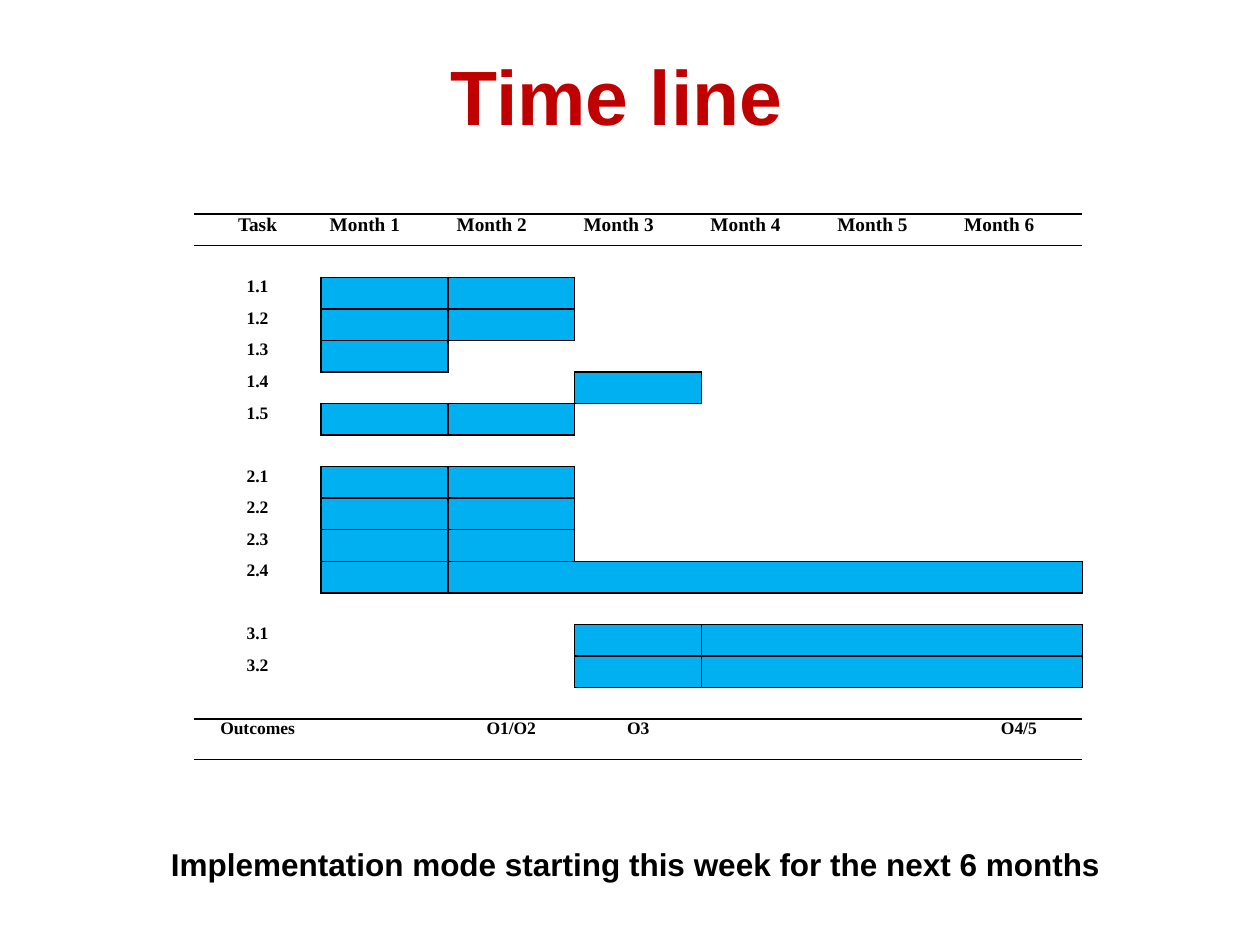
from dataclasses import dataclass

from lxml.etree import SubElement
from pptx import Presentation
from pptx.dml.color import RGBColor
from pptx.enum.text import MSO_ANCHOR, PP_ALIGN
from pptx.oxml.ns import qn
from pptx.util import Inches, Pt

COLOURS = {"title": "C00000", "ink": "000000", "bar": "00B0F0"}
SLIDE_WIDTH, SLIDE_HEIGHT = Inches(10), Inches(7.5)
MONTHS = 6
COLUMNS = MONTHS + 1
TABLE_LEFT, TABLE_TOP = Inches(1.54), Inches(1.7)
TABLE_WIDTH, TABLE_HEIGHT = Inches(7.05), Inches(4.33)
OUTCOME_HEIGHT = Inches(0.32)
NO_STYLE = "{2D5ABB26-0587-4C30-8999-92F81FD0307C}"


@dataclass(frozen=True)
class Task:
    label: str
    first_month: int
    last_month: int


@dataclass(frozen=True)
class Caption:
    text: str
    left: float
    top: float
    width: float
    height: float
    size: int
    colour: str
    wrap: bool


GROUPS = [
    [Task("1.1", 1, 2), Task("1.2", 1, 2), Task("1.3", 1, 1), Task("1.4", 3, 3), Task("1.5", 1, 2)],
    [Task("2.1", 1, 2), Task("2.2", 1, 2), Task("2.3", 1, 2), Task("2.4", 1, 6)],
    [Task("3.1", 3, 6), Task("3.2", 3, 6)],
]
OUTCOMES = {0: "Outcomes", 2: "O1/O2", 3: "O3", 6: "O4/5"}
CAPTIONS = [
    Caption("Time line", 0.098, 0.037, 0.783, 0.127, 44, "title", True),
    Caption("Implementation mode starting this week for the next 6 months",
            0.122, 0.888, 0.765, 0.053, 18, "ink", False),
]


def style_paragraph(para, font_name: str, size: int, colour: str, alignment) -> None:
    para.alignment = alignment
    para.font.name = font_name
    para.font.size = Pt(size)
    para.font.bold = True
    para.font.color.rgb = RGBColor.from_string(COLOURS[colour])


def add_caption(page, caption: Caption) -> None:
    box = page.shapes.add_textbox(
        int(SLIDE_WIDTH * caption.left), int(SLIDE_HEIGHT * caption.top),
        int(SLIDE_WIDTH * caption.width), int(SLIDE_HEIGHT * caption.height))
    frame = box.text_frame
    frame.word_wrap = caption.wrap
    frame.vertical_anchor = MSO_ANCHOR.MIDDLE
    para = frame.paragraphs[0]
    para.text = caption.text
    style_paragraph(para, "Arial", caption.size, caption.colour, PP_ALIGN.CENTER)


def write_cell(cell, text: str, size: int = 10, alignment=PP_ALIGN.CENTER) -> None:
    para = cell.text_frame.paragraphs[0]
    para.text = text
    para.space_before, para.space_after = Pt(2), Pt(6)
    style_paragraph(para, "Times New Roman", size, "ink", alignment)


def clear_cell(cell) -> None:
    cell.margin_left = cell.margin_right = Inches(0.07)
    cell.margin_top = cell.margin_bottom = 0
    cell.fill.background()
    cell.text_frame.paragraphs[0].font.size = Pt(10)


def draw_edges(cell, edges: str) -> None:
    properties = cell._tc.get_or_add_tcPr()
    for position, edge in enumerate(side for side in "LRTB" if side in edges):
        line = SubElement(properties, qn(f"a:ln{edge}"), w=str(Pt(1)))
        fill = SubElement(line, qn("a:solidFill"))
        SubElement(fill, qn("a:srgbClr"), val=COLOURS["ink"])
        properties.insert(position, line)


def draw_task(table, row: int, task: Task) -> None:
    write_cell(table.cell(row, 0), task.label)
    for month in range(task.first_month, task.last_month + 1):
        cell = table.cell(row, month)
        cell.fill.solid()
        cell.fill.fore_color.rgb = RGBColor.from_string(COLOURS["bar"])
        left = "L" if month == task.first_month else ""
        right = "R" if month == task.last_month else ""
        draw_edges(cell, "TB" + left + right)


def add_timeline(page) -> None:
    row_count = 2 + sum(len(group) + 1 for group in GROUPS) + 1
    table = page.shapes.add_table(
        row_count, COLUMNS, TABLE_LEFT, TABLE_TOP, TABLE_WIDTH, TABLE_HEIGHT).table
    table.first_row = table.horz_banding = False
    table._tbl.tblPr.find(qn("a:tableStyleId")).text = NO_STYLE
    for row in table.rows:
        row.height = (TABLE_HEIGHT - OUTCOME_HEIGHT) // (row_count - 1)
    outcome_row = row_count - 1
    table.rows[outcome_row].height = OUTCOME_HEIGHT
    for cell in table.iter_cells():
        clear_cell(cell)

    write_cell(table.cell(0, 0), "Task", 11)
    for month in range(1, COLUMNS):
        write_cell(table.cell(0, month), f"Month {month}", 11, PP_ALIGN.JUSTIFY)
    for column, text in OUTCOMES.items():
        write_cell(table.cell(outcome_row, column), text)
    for row in (0, outcome_row):
        for column in range(COLUMNS):
            draw_edges(table.cell(row, column), "TB")

    row = 2
    for group in GROUPS:
        for task in group:
            draw_task(table, row, task)
            row += 1
        row += 1


def main() -> None:
    deck = Presentation()
    deck.slide_width, deck.slide_height = SLIDE_WIDTH, SLIDE_HEIGHT
    page = deck.slides.add_slide(deck.slide_layouts[6])
    add_timeline(page)
    for caption in CAPTIONS:
        add_caption(page, caption)
    deck.save("out.pptx")


if __name__ == "__main__":
    main()
